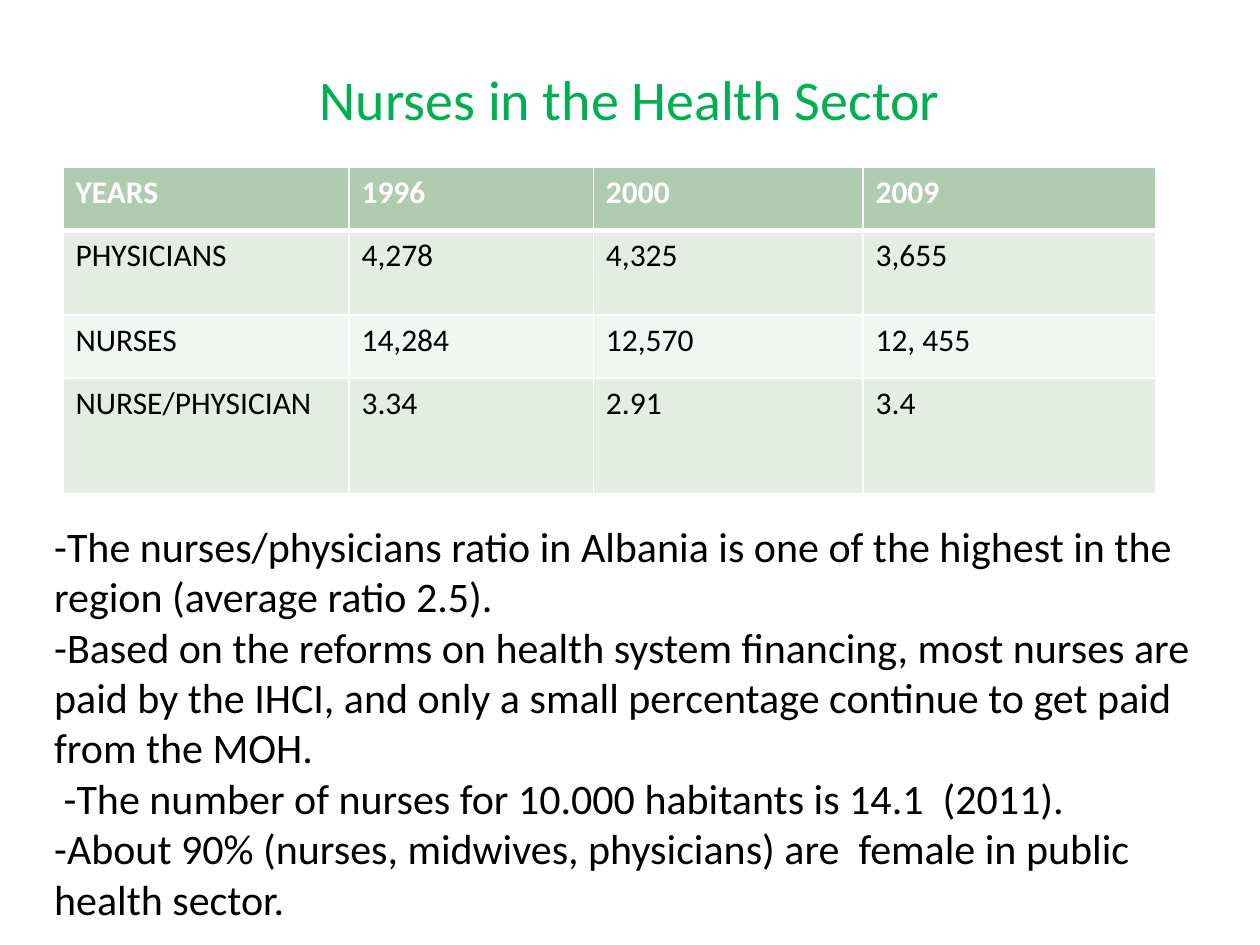
from lxml.etree import SubElement
from pptx import Presentation
from pptx.dml.color import RGBColor
from pptx.enum.text import MSO_ANCHOR, MSO_AUTO_SIZE, PP_ALIGN
from pptx.oxml.ns import qn
from pptx.util import Pt

EMU_PER_PX = 9144

TITLE = "Nurses in the Health Sector"
COLUMN_WIDTHS = [227, 194, 214, 232]
ROW_HEIGHTS = [50, 67, 50, 92]
STAFF_ROWS = [
    ["YEARS", "1996", "2000", "2009"],
    ["PHYSICIANS", "4,278", "4,325", "3,655"],
    ["NURSES", "14,284", "12,570", "12, 455"],
    ["NURSE/PHYSICIAN", "3.34", "2.91", "3.4"],
]
FINDINGS = [
    "-The nurses/physicians ratio in Albania is one of the highest in the region "
    "(average ratio 2.5).",
    "-Based on the reforms on health system financing, most nurses are paid by the IHCI, "
    "and only a small percentage continue to get paid from the MOH.",
    " -The number of nurses for 10.000 habitants is 14.1  (2011).",
    "-About 90% (nurses, midwives, physicians) are  female in public health sector.",
]


def px(length):
    """Turn px, 100 to the inch, into EMU."""
    return length * EMU_PER_PX


def color(value):
    """Turn a hex string into a colour."""
    return RGBColor.from_string(value)


class SlideBuilder:
    """Holds the style and the current slide."""

    font = "Calibri"
    black = "000000"
    white = "FFFFFF"
    green = "00B050"
    header_fill = "B0CCB0"
    band_fills = ["F2F6F2", "E4ECE4"]

    def __init__(self, slide):
        """Keep the slide to build on."""
        self.slide = slide

    def place(self, shape, left, top, width, height):
        """Move and size a shape."""
        shape.left, shape.top = px(left), px(top)
        shape.width, shape.height = px(width), px(height)

    def add_run(self, paragraph, text, size, fill, bold=False):
        """Add one formatted run."""
        run = paragraph.add_run()
        run.text = text
        run.font.name = self.font
        run.font.size = Pt(size)
        run.font.bold = bold
        run.font.color.rgb = color(fill)

    def add_title(self, text, *box):
        """Fill the title placeholder."""
        title = self.slide.shapes.title
        self.place(title, *box)
        title.text_frame.vertical_anchor = MSO_ANCHOR.MIDDLE
        paragraph = title.text_frame.paragraphs[0]
        paragraph.alignment = PP_ALIGN.CENTER
        self.add_run(paragraph, text, 32, self.green)

    def add_list(self, items, *box):
        """Fill the body placeholder with paragraphs that have no bullets."""
        body = self.slide.placeholders[1]
        self.place(body, *box)
        frame = body.text_frame
        frame.auto_size = MSO_AUTO_SIZE.NONE
        for index, item in enumerate(items):
            paragraph = frame.add_paragraph() if index else frame.paragraphs[0]
            paragraph.space_before = Pt(0)
            properties = paragraph._p.get_or_add_pPr()
            properties.set("marL", "0")
            properties.set("indent", "0")
            SubElement(properties, qn("a:buNone"))
            self.add_run(paragraph, item, 24, self.black)

    def add_borders(self, cell, top, bottom):
        """Draw white borders around a cell, with widths in points."""
        properties = cell._tc.get_or_add_tcPr()
        for side, width in (("L", 1), ("R", 1), ("T", top), ("B", bottom)):
            line = SubElement(properties, qn(f"a:ln{side}"), w=str(Pt(width)))
            fill = SubElement(line, qn("a:solidFill"))
            SubElement(fill, qn("a:srgbClr"), val=self.white)

    def add_table(self, rows, left, top, widths, heights):
        """Add a banded table with a header row."""
        frame = self.slide.shapes.add_table(
            len(rows), len(widths), px(left), px(top), px(sum(widths)), px(sum(heights)))
        table = frame.table
        for column, width in zip(table.columns, widths):
            column.width = px(width)
        for row_index, (row, values) in enumerate(zip(table.rows, rows)):
            row.height = px(heights[row_index])
            header = row_index == 0
            for cell, value in zip(row.cells, values):
                self.add_borders(cell, 3 if row_index == 1 else 1, 3 if header else 1)
                cell.fill.solid()
                cell.fill.fore_color.rgb = color(
                    self.header_fill if header else self.band_fills[row_index % 2])
                self.add_run(cell.text_frame.paragraphs[0], value, 18,
                             self.white if header else self.black, header)


def main():
    """Build and save the slide."""
    presentation = Presentation()
    presentation.slide_width, presentation.slide_height = px(1000), px(750)
    builder = SlideBuilder(presentation.slides.add_slide(presentation.slide_layouts[1]))
    builder.add_title(TITLE, 50, 30, 900, 95)
    builder.add_table(STAFF_ROWS, 50, 133, COLUMN_WIDTHS, ROW_HEIGHTS)
    builder.add_list(FINDINGS, 33, 408, 925, 364)
    presentation.save("out.pptx")


if __name__ == "__main__":
    main()
